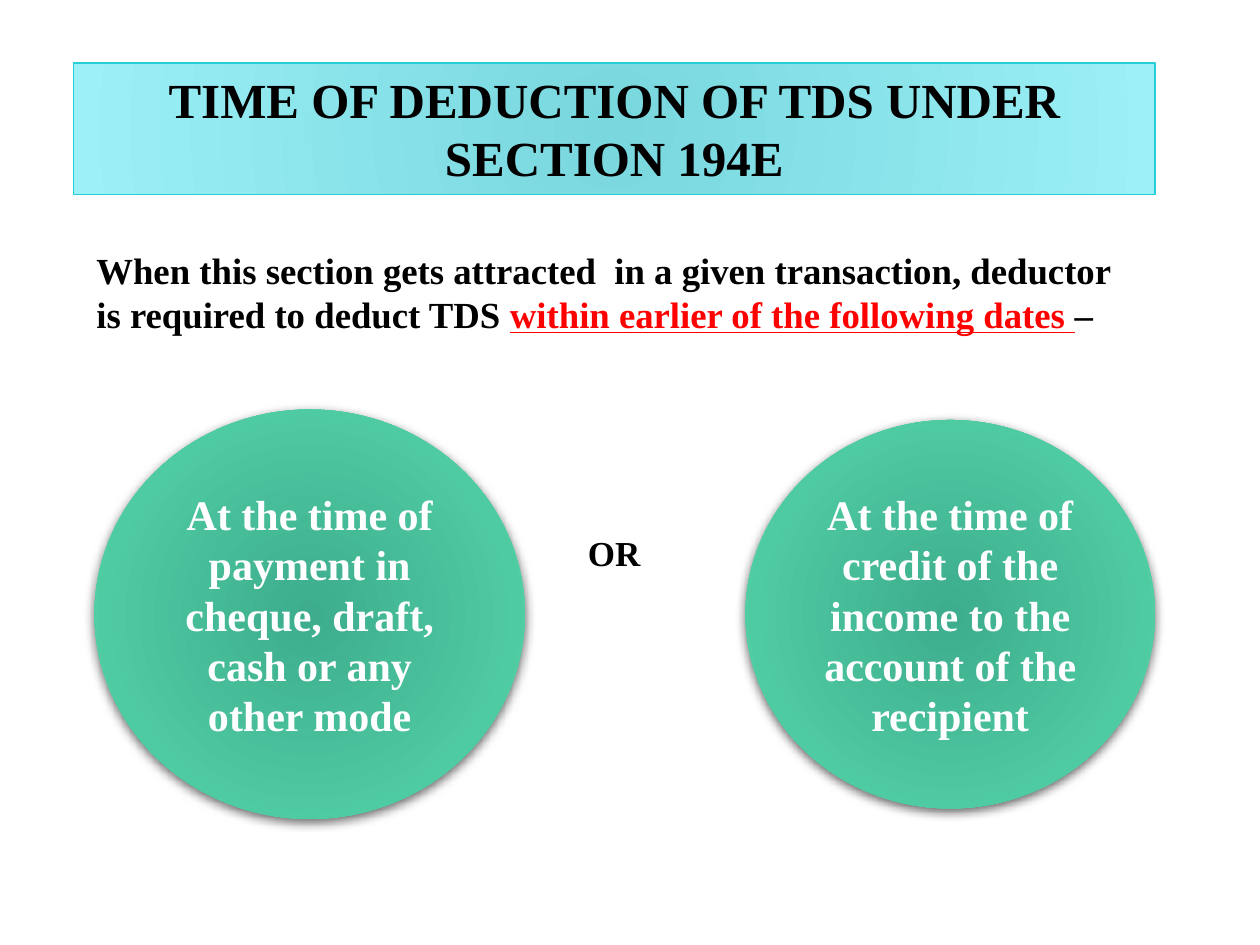
import pptx
import pptx.util
import pptx.dml.color
import pptx.enum.shapes
import pptx.enum.text
import pptx.oxml
import pptx.oxml.ns

Pt = pptx.util.Pt
RGB = pptx.dml.color.RGBColor
SHAPE = pptx.enum.shapes.MSO_SHAPE
ALIGN = pptx.enum.text.PP_ALIGN
ANCHOR = pptx.enum.text.MSO_ANCHOR
qn = pptx.oxml.ns.qn
NS = pptx.oxml.ns.nsdecls("a")

BLACK = RGB(0x00, 0x00, 0x00)
WHITE = RGB(0xFF, 0xFF, 0xFF)
RED = RGB(0xFF, 0x00, 0x00)
CYAN_LINE = RGB(0x27, 0xCE, 0xD7)
CYAN = (RGB(0x79, 0xD7, 0xDE), RGB(0x9C, 0xF0, 0xF7))
GREEN = (RGB(0x3D, 0xAD, 0x8D), RGB(0x57, 0xD8, 0xAC))


def add_run(p, text, size=20, color=BLACK, underline=False, font="Times New Roman"):
    r = p.add_run()
    r.text = text
    r.font.name = font
    r.font.size = Pt(size)
    r.font.bold = True
    r.font.underline = underline
    r.font.color.rgb = color


class Deck:
    def __init__(self, width, height):
        self.prs = pptx.Presentation()
        self.prs.slide_width, self.prs.slide_height = Pt(width), Pt(height)
        self.s = self.prs.slides.add_slide(self.prs.slide_layouts[6])

    def text(self, box, *runs, align=ALIGN.LEFT):
        """Text box with one paragraph; each run is (text, format)."""
        sp = self.s.shapes.add_textbox(*map(Pt, box))
        tf = sp.text_frame
        tf.word_wrap = True
        tf.paragraphs[0].alignment = align
        for text, style in runs:
            add_run(tf.paragraphs[0], text, **style)

    def shape(self, kind, box, colors, text, line=None, anchor=ANCHOR.MIDDLE, **style):
        """Shape with a radial gradient and centred text."""
        sp = self.s.shapes.add_shape(kind, *map(Pt, box))
        sp.shadow.inherit = False
        sp.fill.gradient()
        for stop, color, position in zip(sp.fill.gradient_stops, colors, (0, 1)):
            stop.color.rgb, stop.position = color, position
        lin = sp.element.spPr.find(qn("a:gradFill")).find(qn("a:lin"))
        lin.getparent().replace(lin, pptx.oxml.parse_xml(
            f'<a:path {NS} path="circle"><a:fillToRect l="100000" t="100000"'
            ' r="100000" b="100000"/></a:path>'))
        if line is None:
            sp.line.fill.background()
        else:
            sp.line.color.rgb = line
            sp.line.width = Pt(0.75)
        tf = sp.text_frame
        tf.word_wrap = True
        tf.vertical_anchor = anchor
        tf.paragraphs[0].alignment = ALIGN.CENTER
        add_run(tf.paragraphs[0], text, **style)
        return sp

    def option(self, box, text):
        """Green ellipse with a soft shadow below it."""
        sp = self.shape(SHAPE.OVAL, box, GREEN, text, size=24, color=WHITE)
        sp.element.spPr.find(qn("a:effectLst")).append(pptx.oxml.parse_xml(
            f'<a:outerShdw {NS} blurRad="{Pt(6)}" dist="{Pt(2)}" dir="5400000"'
            ' rotWithShape="0"><a:srgbClr val="000000"><a:alpha val="60000"/>'
            '</a:srgbClr></a:outerShdw>'))


def main():
    deck = Deck(720, 540)

    # Title banner
    deck.shape(SHAPE.RECTANGLE, (42, 36, 618, 75), CYAN,
               "TIME OF DEDUCTION OF TDS UNDER SECTION 194E",
               line=CYAN_LINE, anchor=ANCHOR.TOP, size=28)

    # Introduction
    deck.text((48, 138, 606, 58),
              ("When this section gets attracted  in a given transaction, "
               "deductor is required to deduct TDS ", dict(size=21)),
              ("within earlier of the following dates ",
               dict(size=21, color=RED, underline=True)),
              ("–", dict(size=21)))

    # The two dates
    deck.option((54, 234, 246, 234),
                "At the time of payment in cheque, draft, cash or any other mode")
    deck.text((318, 300, 66, 31.5), ("OR", dict(size=20)), align=ALIGN.CENTER)
    deck.option((426, 240, 234, 222),
                "At the time of credit of the income to the account of the recipient")

    deck.prs.save("out.pptx")


if __name__ == "__main__":
    main()
